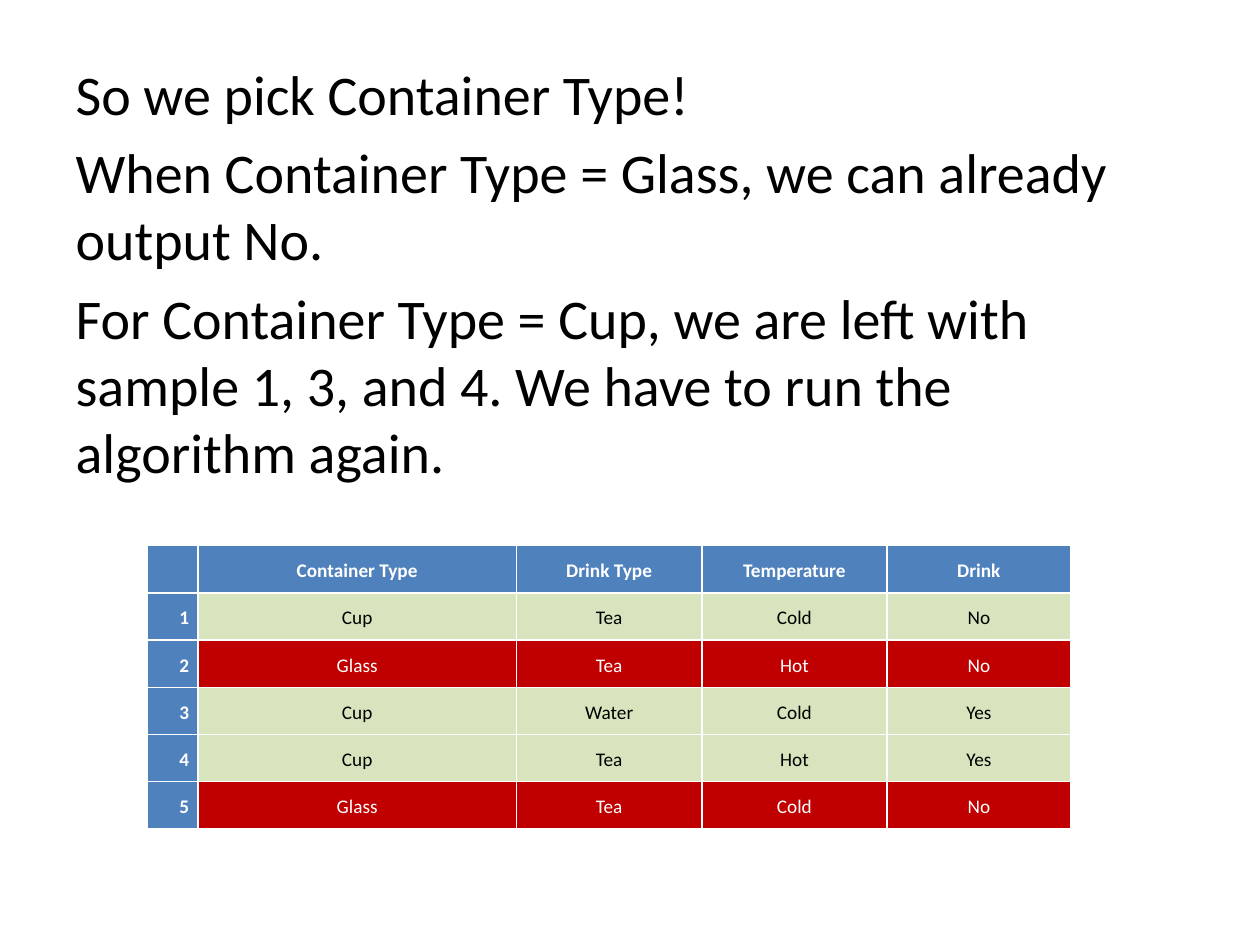
from pptx import Presentation
from pptx.dml.color import RGBColor
from pptx.enum.text import MSO_ANCHOR, PP_ALIGN
from pptx.oxml.xmlchemy import OxmlElement
from pptx.util import Inches, Pt

COLORS = {"blue": "4F81BD", "green": "D7E4BD", "red": "C00000",
          "white": "FFFFFF", "black": "000000"}
BODY = [
    "So we pick Container Type!",
    "When Container Type = Glass, we can already output No.",
    "For Container Type = Cup, we are left with sample 1, 3, and 4. "
    "We have to run the algorithm again.",
]
HEADER = ["", "Container Type", "Drink Type", "Temperature", "Drink"]
SAMPLES = [
    ("Cup", "Tea", "Cold", "No"),
    ("Glass", "Tea", "Hot", "No"),
    ("Cup", "Water", "Cold", "Yes"),
    ("Cup", "Tea", "Hot", "Yes"),
    ("Glass", "Tea", "Cold", "No"),
]
COL_WIDTHS = [0.4, 2.53, 1.47, 1.47, 1.46]
ROW_HEIGHT = 0.375


def write(p, text, size=11, color="black", bold=False, align=None, spacing=None):
    p.alignment = align
    p.line_spacing = spacing
    if text:
        r = p.add_run()
        r.text = text
        r.font.name = "Calibri"
        r.font.size = Pt(size)
        r.font.bold = bold
        r.font.color.rgb = RGBColor.from_string(COLORS[color])


def add_body(s):
    sp = s.placeholders[1]
    sp.left, sp.top, sp.width, sp.height = map(Inches, (0.5, 0.42, 9, 6.28))
    tf = sp.text_frame
    for i, text in enumerate(BODY):
        p = tf.add_paragraph() if i else tf.paragraphs[0]
        write(p, text, size=32)
        pPr = p._p.get_or_add_pPr()
        pPr.set("marL", "0")
        pPr.set("indent", "0")
        pPr.append(OxmlElement("a:buNone"))


def add_samples(s):
    rows = [HEADER] + [(str(n), *row) for n, row in enumerate(SAMPLES, 1)]
    sp = s.shapes.add_table(len(rows), len(HEADER), Inches(1.17), Inches(4.33),
                            Inches(sum(COL_WIDTHS)), Inches(ROW_HEIGHT * len(rows)))
    table = sp.table
    table.first_col = True
    table.horz_banding = False
    for col, width in zip(table.columns, COL_WIDTHS):
        col.width = Inches(width)
    for i, row in enumerate(rows):
        table.rows[i].height = Inches(ROW_HEIGHT)
        for j, text in enumerate(row):
            heading = i == 0 or j == 0
            fill = "blue" if heading else "red" if row[1] == "Glass" else "green"
            cell = table.cell(i, j)
            cell.fill.solid()
            cell.fill.fore_color.rgb = RGBColor.from_string(COLORS[fill])
            cell.vertical_anchor = MSO_ANCHOR.MIDDLE
            cell.margin_left = cell.margin_right = Inches(0.07)
            cell.margin_top = cell.margin_bottom = 0
            write(cell.text_frame.paragraphs[0], text, bold=heading, spacing=1.15,
                  color="black" if fill == "green" else "white",
                  align=PP_ALIGN.CENTER if j else PP_ALIGN.RIGHT)


def main():
    prs = Presentation()
    prs.slide_width, prs.slide_height = Inches(10), Inches(7.5)
    s = prs.slides.add_slide(prs.slide_layouts[1])
    title = s.shapes.title.element
    title.getparent().remove(title)
    add_body(s)
    add_samples(s)
    prs.save("out.pptx")


if __name__ == "__main__":
    main()
